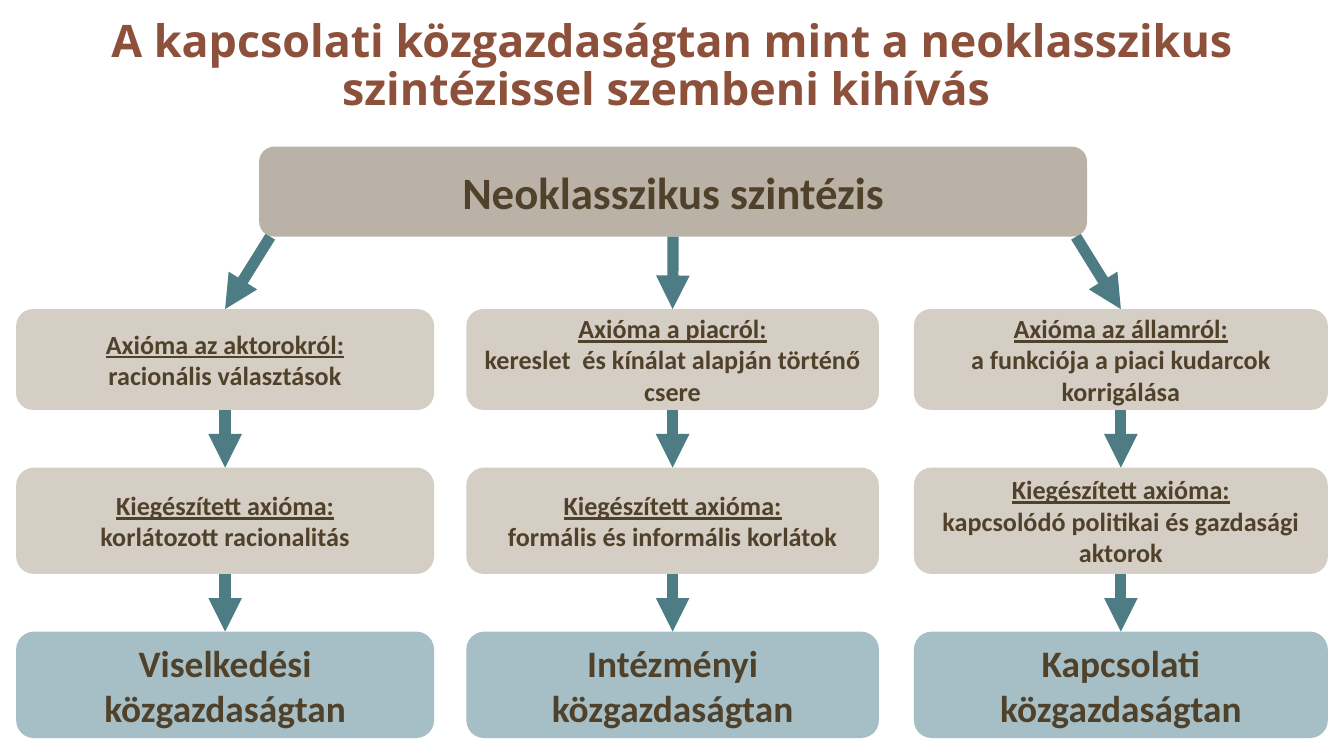
from lxml import etree
from pptx import Presentation
from pptx.dml.color import RGBColor
from pptx.enum import shapes, text
from pptx.oxml import ns
from pptx.util import Pt

COLORS = {
    "title": "8D503B",
    "text": "50412B",
    "header": "B3AA9D",
    "axiom": "D1C9BE",
    "school": "6B95A1",
    "arrow": "4D7C85",
}
TOP, LEFT, BOTTOM = 0, 1, 2  # connection sites

COLUMN_SPANS = [(8.64, 223.92), (249.84, 221.04), (489.6, 221.76)]
COLUMNS = [
    (("Axióma az aktorokról:", "racionális választások"),
     ("Kiegészített axióma:", "korlátozott racionalitás"),
     "Viselkedési közgazdaságtan"),
    (("Axióma a piacról:", "kereslet  és kínálat alapján történő csere"),
     ("Kiegészített axióma:", "formális és informális korlátok"),
     "Intézményi közgazdaságtan"),
    (("Axióma az államról:", "a funkciója a piaci kudarcok korrigálása"),
     ("Kiegészített axióma:", "kapcsolódó politikai és gazdasági aktorok"),
     "Kapcsolati közgazdaságtan"),
]


def rgb(name):
    return RGBColor.from_string(COLORS[name])


def write(tf, lines, size, color="text", font="Calibri", underline_first=False):
    tf.word_wrap = True
    tf.vertical_anchor = text.MSO_ANCHOR.MIDDLE
    for i, line in enumerate(lines):
        p = tf.paragraphs[0] if i == 0 else tf.add_paragraph()
        p.alignment = text.PP_ALIGN.CENTER
        r = p.add_run()
        r.text = line
        r.font.name = font
        r.font.size = Pt(size)
        r.font.bold = True
        r.font.underline = underline_first and i == 0
        r.font.color.rgb = rgb(color)


def add_box(s, box, fill, opacity, lines, size, underline_first=False):
    sp = s.shapes.add_shape(shapes.MSO_SHAPE.ROUNDED_RECTANGLE,
                            *[Pt(v) for v in box])
    sp.shadow.inherit = False
    sp.line.fill.background()
    sp.fill.solid()
    sp.fill.fore_color.rgb = rgb(fill)
    color = sp._element.spPr.find(".//" + ns.qn("a:srgbClr"))
    etree.SubElement(color, ns.qn("a:alpha"), val=str(opacity * 1000))
    write(sp.text_frame, lines, size, underline_first=underline_first)
    return sp


def add_arrow(s, target, source=None, start=(0, 0)):
    """Point at the top of target, from the bottom of source or from start."""
    x, y = [Pt(v) for v in start]
    c = s.shapes.add_connector(shapes.MSO_CONNECTOR.STRAIGHT, x, y, x, y)
    if source is not None:
        c.begin_connect(source, BOTTOM)
    c.end_connect(target, TOP)
    c.line.color.rgb = rgb("arrow")
    c.line.width = Pt(6)
    etree.SubElement(c.line._get_or_add_ln(), ns.qn("a:tailEnd"), type="triangle")
    etree.SubElement(c._element.spPr, ns.qn("a:effectLst"))


def add_title(s, box):
    tf = s.shapes.add_textbox(*[Pt(v) for v in box]).text_frame
    write(tf, ["A kapcsolati közgazdaságtan mint a neoklasszikus "
               "szintézissel szembeni kihívás "], 24, "title", "Open Sans")
    tf.paragraphs[0].line_spacing = 0.9


def add_column(s, box, axiom, extended, school):
    """Stack two axioms and the resulting school; return the top box."""
    x, y, w, h = box
    axiom_h, row_h = 54, 57
    gap = (h - axiom_h - 2 * row_h) / 2
    extended_y = y + axiom_h + gap
    first = add_box(s, (x, y, w, axiom_h), "axiom", 90, axiom, 14, True)
    second = add_box(s, (x, extended_y, w, row_h), "axiom", 90, extended, 14, True)
    third = add_box(s, (x, y + h - row_h, w, row_h), "school", 60, [school], 20)
    add_arrow(s, second, first)
    add_arrow(s, third, second)
    return first


def add_header(s, box, targets):
    """Draw the synthesis box with an arrow to each of the three targets."""
    x, y, w, h = box
    left, middle, right = targets
    corner_inset = 6
    add_arrow(s, left, start=(x + corner_inset, y + h))
    add_arrow(s, right, start=(x + w - corner_inset, y + h))
    header = add_box(s, box, "header", 90, ["Neoklasszikus szintézis"], 24)
    add_arrow(s, middle, header)


def main():
    prs = Presentation()
    prs.slide_width, prs.slide_height = Pt(720), Pt(405)
    s = prs.slides.add_slide(prs.slide_layouts[6])
    add_title(s, (8.64, 0, 702.72, 72))
    tops = [add_column(s, (x, 165.6, w, 229.8), *content)
            for (x, w), content in zip(COLUMN_SPANS, COLUMNS)]
    add_header(s, (138.8, 78.6, 443.6, 48.2), tops)
    prs.save("out.pptx")


if __name__ == "__main__":
    main()
